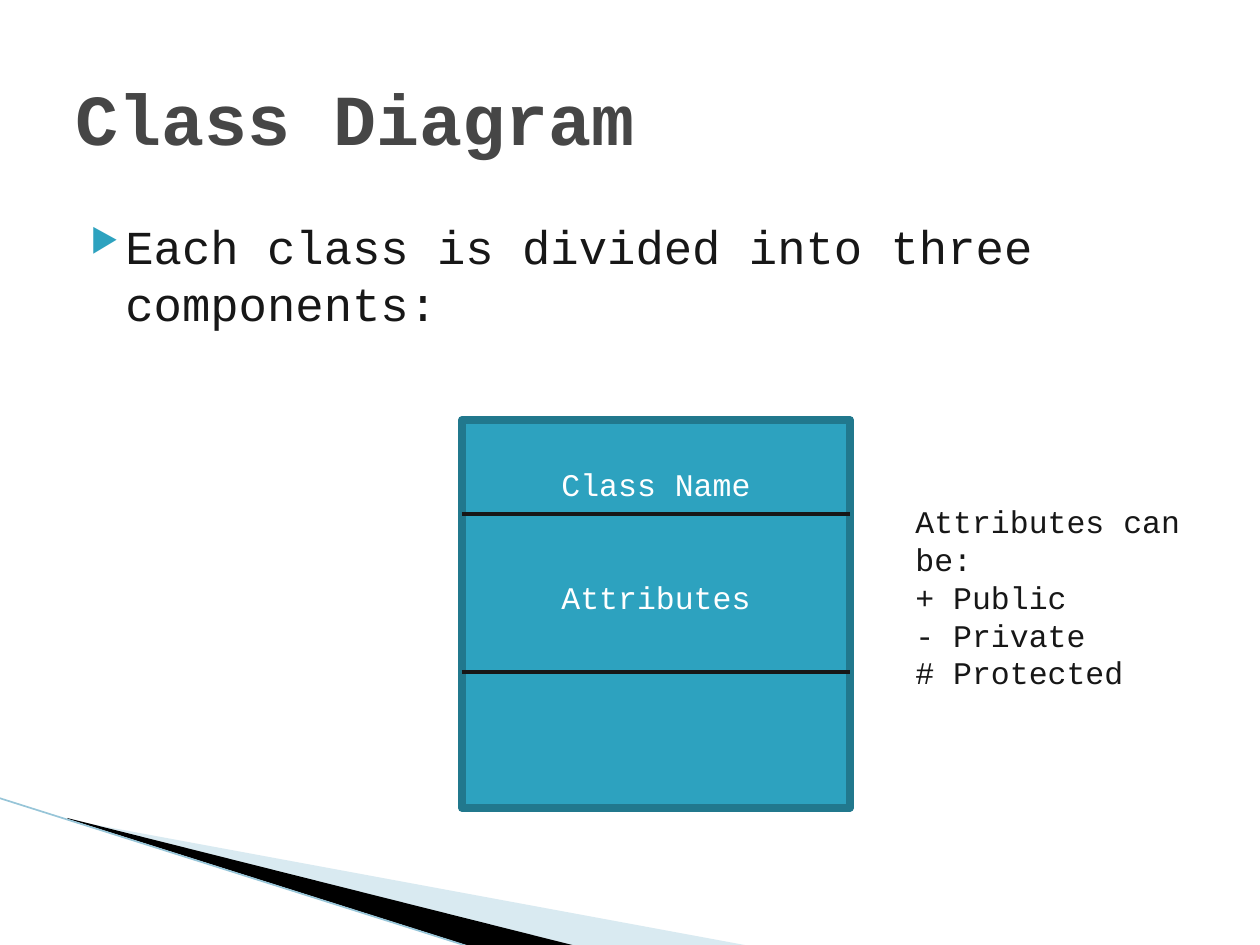
from lxml import etree
from pptx import Presentation
from pptx import util as u
from pptx.dml.color import RGBColor
from pptx.enum import shapes, text
from pptx.oxml import ns

PX = 914400 / 126
FONT = "Courier New"
WHITE = RGBColor(0xFF, 0xFF, 0xFF)
INK = RGBColor(0x17, 0x17, 0x17)
GREY = RGBColor(0x46, 0x46, 0x46)
TEAL = RGBColor(0x2D, 0xA2, 0xBF)
DEEP = RGBColor(0x21, 0x78, 0x8D)
PALE = RGBColor(0xA0, 0xCB, 0xDC)
EDGE = RGBColor(0x97, 0xC5, 0xD8)
BLACK = RGBColor(0, 0, 0)


def px(n):
    return u.Emu(round(n * PX))


def add_tag(node, tag, **attrs):
    return etree.SubElement(node, ns.qn(tag), **attrs)


def add_run(par, words, size, color, bold=False):
    run = par.add_run()
    run.text = words
    font = run.font
    font.name, font.size, font.bold = FONT, u.Pt(size), bold
    font.color.rgb = color


def add_box(slide, box):
    frame = slide.shapes.add_textbox(*map(px, box)).text_frame
    frame.word_wrap = True
    return frame


def add_line(slide, ends, color, width):
    line = slide.shapes.add_connector(
        shapes.MSO_CONNECTOR.STRAIGHT, *map(px, ends))
    line.line.color.rgb = color
    line.line.width = u.Pt(width)
    add_tag(line._element.spPr, "a:effectLst")


def add_wedge(slide, points, color, alpha=None):
    pen = slide.shapes.build_freeform(*points[0], scale=PX)
    pen.add_line_segments(points[1:])
    wedge = pen.convert_to_shape()
    wedge.shadow.inherit = False
    wedge.fill.solid()
    wedge.fill.fore_color.rgb = color
    wedge.line.fill.background()
    if alpha:
        tone = wedge._element.spPr.find(".//" + ns.qn("a:srgbClr"))
        add_tag(tone, "a:alpha", val=str(alpha * 1000))


def add_corner(slide, box):
    """Wedges and edge line in the lower left corner."""
    x, y, w, h = box
    base = y + h
    add_wedge(slide, [(x + 69, y + 22), (x + w, base),
                      (x + 575, base), (x + 69, y + 21)], PALE, 40)
    add_wedge(slide, [(x + 67, y + 20), (x + 576, base),
                      (x + 469, base), (x + 68, y + 21)], BLACK)
    add_line(slide, (x - 1, y, x + 467, base), EDGE, 0.95)


def add_title(slide, box):
    frame = add_box(slide, box)
    frame.vertical_anchor = text.MSO_ANCHOR.MIDDLE
    add_run(frame.paragraphs[0], "Class Diagram", 41, GREY, True)


def add_body(slide, box):
    frame = add_box(slide, box)
    frame.margin_top = px(13)
    par = frame.paragraphs[0]
    props = par._p.get_or_add_pPr()
    props.set("marL", str(px(50)))
    props.set("indent", str(px(-35)))
    tone = add_tag(props, "a:buClr")
    add_tag(tone, "a:srgbClr", val=str(TEAL))
    add_tag(props, "a:buSzPct", val="68000")
    add_tag(props, "a:buChar", char="▶")
    add_run(par, "Each class is divided into three components:", 27, INK)


def add_class(slide, box):
    """Class box with two dividers."""
    x, y, w, h = box
    rect = slide.shapes.add_shape(
        shapes.MSO_SHAPE.RECTANGLE, *map(px, box))
    rect.shadow.inherit = False
    rect.fill.solid()
    rect.fill.fore_color.rgb = TEAL
    rect.line.color.rgb = DEEP
    rect.line.width = u.Pt(4.33)
    frame = rect.text_frame
    frame.word_wrap = True
    frame.vertical_anchor = text.MSO_ANCHOR.TOP
    frame.margin_top = px(45)
    name, attrs = frame.paragraphs[0], frame.add_paragraph()
    attrs.space_before = u.Pt(43)
    for par, words in ((name, "Class Name"), (attrs, "Attributes")):
        par.alignment = text.PP_ALIGN.CENTER
        add_run(par, words, 18, WHITE)
    for drop in (94, 252):
        add_line(slide, (x, y + drop, x + w, y + drop), INK, 1.75)


def add_notes(slide, box):
    """Legend of attribute kinds."""
    frame = add_box(slide, box)
    rows = ("Attributes can be:", "+ Public", "- Private", "# Protected")
    for i, words in enumerate(rows):
        par = frame.add_paragraph() if i else frame.paragraphs[0]
        add_run(par, words, 18, INK)


def main():
    deck = Presentation()
    deck.slide_width, deck.slide_height = px(1260), px(945)
    slide = deck.slides.add_slide(deck.slide_layouts[6])
    add_corner(slide, (0, 798, 750, 148))
    add_body(slide, (63, 204, 1134, 624))
    add_title(slide, (63, 38, 1134, 158))
    add_class(slide, (462, 420, 388, 388))
    add_notes(slide, (903, 496, 336, 165))
    deck.save("out.pptx")


if __name__ == "__main__":
    main()
